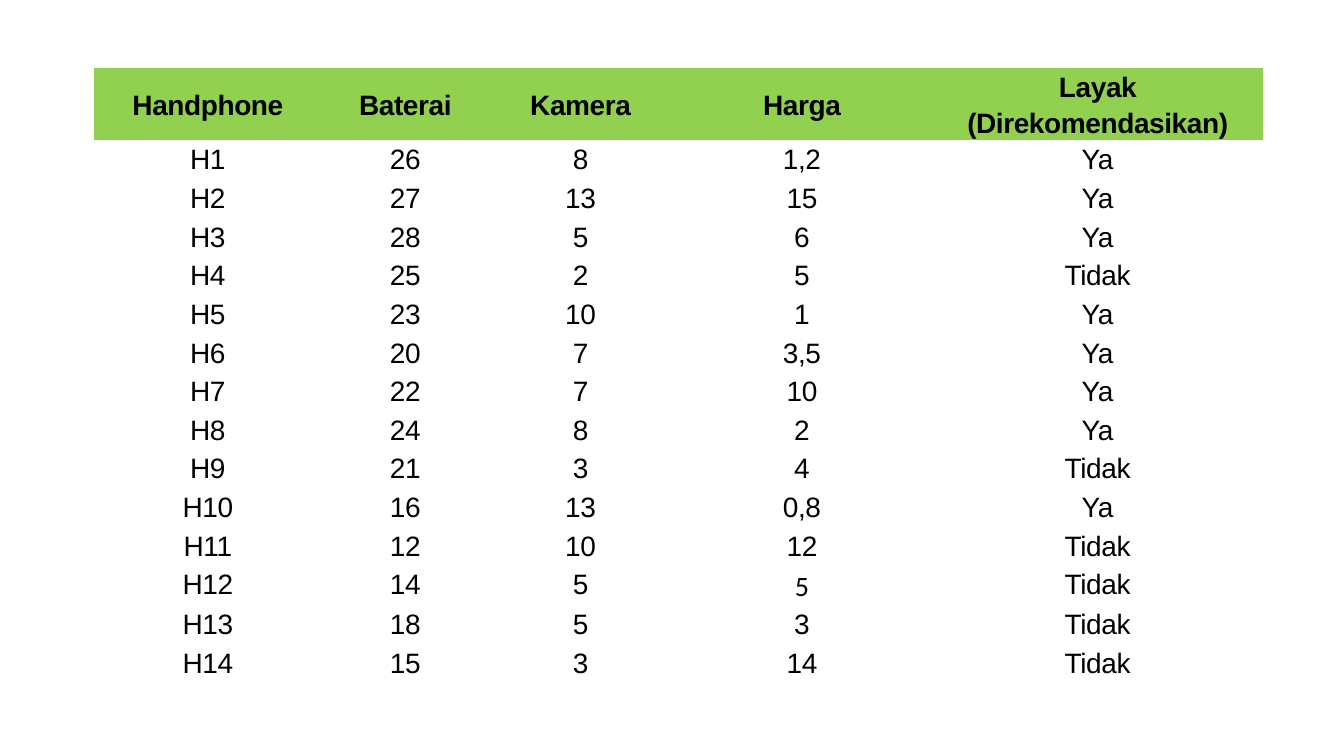
from pptx import Presentation
from pptx import util as u
from pptx.dml import color
from pptx.enum import text
from pptx.oxml import ns

PLAIN_STYLE = "{2D5ABB26-0587-4C30-8999-92F81FD0307C}"
HEADINGS = ["Handphone", "Baterai", "Kamera", "Harga", "Layak (Direkomendasikan)"]
PHONES = [
    ("26", "8", "1,2", "Ya"),
    ("27", "13", "15", "Ya"),
    ("28", "5", "6", "Ya"),
    ("25", "2", "5", "Tidak"),
    ("23", "10", "1", "Ya"),
    ("20", "7", "3,5", "Ya"),
    ("22", "7", "10", "Ya"),
    ("24", "8", "2", "Ya"),
    ("21", "3", "4", "Tidak"),
    ("16", "13", "0,8", "Ya"),
    ("12", "10", "12", "Tidak"),
    ("14", "5", "5", "Tidak"),
    ("18", "5", "3", "Tidak"),
    ("15", "3", "14", "Tidak"),
]
COLUMN_WIDTHS = [5.74, 4.22, 4.62, 6.55, 8.36]
CALIBRI_CELL = (12, 3)


def rgb(code):
    """Return the colour for a hex string."""
    return color.RGBColor.from_string(code)


def fill_cell(cell, wording, heading=False, font="Arial"):
    """Write one centred entry, on green if it is a heading."""
    cell.margin_left = cell.margin_right = u.Cm(0.18)
    cell.margin_top = cell.margin_bottom = 0
    if heading:
        cell.vertical_anchor = text.MSO_ANCHOR.MIDDLE
        cell.fill.solid()
        cell.fill.fore_color.rgb = rgb("92D050")
    else:
        cell.fill.background()
    entry = cell.text_frame.paragraphs[0]
    entry.alignment = text.PP_ALIGN.CENTER
    entry.line_spacing = 1.15
    run = entry.add_run()
    run.text = wording
    run.font.name = font
    run.font.size = u.Pt(20)
    run.font.bold = heading
    run.font.color.rgb = rgb("000000")
    run.font._element.set("spc", "-30")


def phone_table(slide, left, top, width, height):
    """Place the table of phones in the given box, in centimetres."""
    rows = [HEADINGS] + [(f"H{i}", *phone) for i, phone in enumerate(PHONES, 1)]
    phones = slide.shapes.add_table(
        len(rows), len(HEADINGS), u.Cm(left), u.Cm(top), u.Cm(width), u.Cm(height)
    ).table
    phones.horz_banding = False
    phones._tbl.tblPr.find(ns.qn("a:tableStyleId")).text = PLAIN_STYLE
    for column, share in zip(phones.columns, COLUMN_WIDTHS):
        column.width = u.Cm(width * share / sum(COLUMN_WIDTHS))
    for r, row in enumerate(rows):
        for c, wording in enumerate(row):
            font = "Calibri" if (r, c) == CALIBRI_CELL else "Arial"
            fill_cell(phones.cell(r, c), wording, r == 0, font)


def main():
    """Build the slide and save it."""
    deck = Presentation()
    deck.slide_width, deck.slide_height = u.Cm(33.87), u.Cm(19.05)
    slide = deck.slides.add_slide(deck.slide_layouts[6])
    phone_table(slide, 2.37, 1.71, 29.47, 14.61)
    deck.save("out.pptx")


if __name__ == "__main__":
    main()
